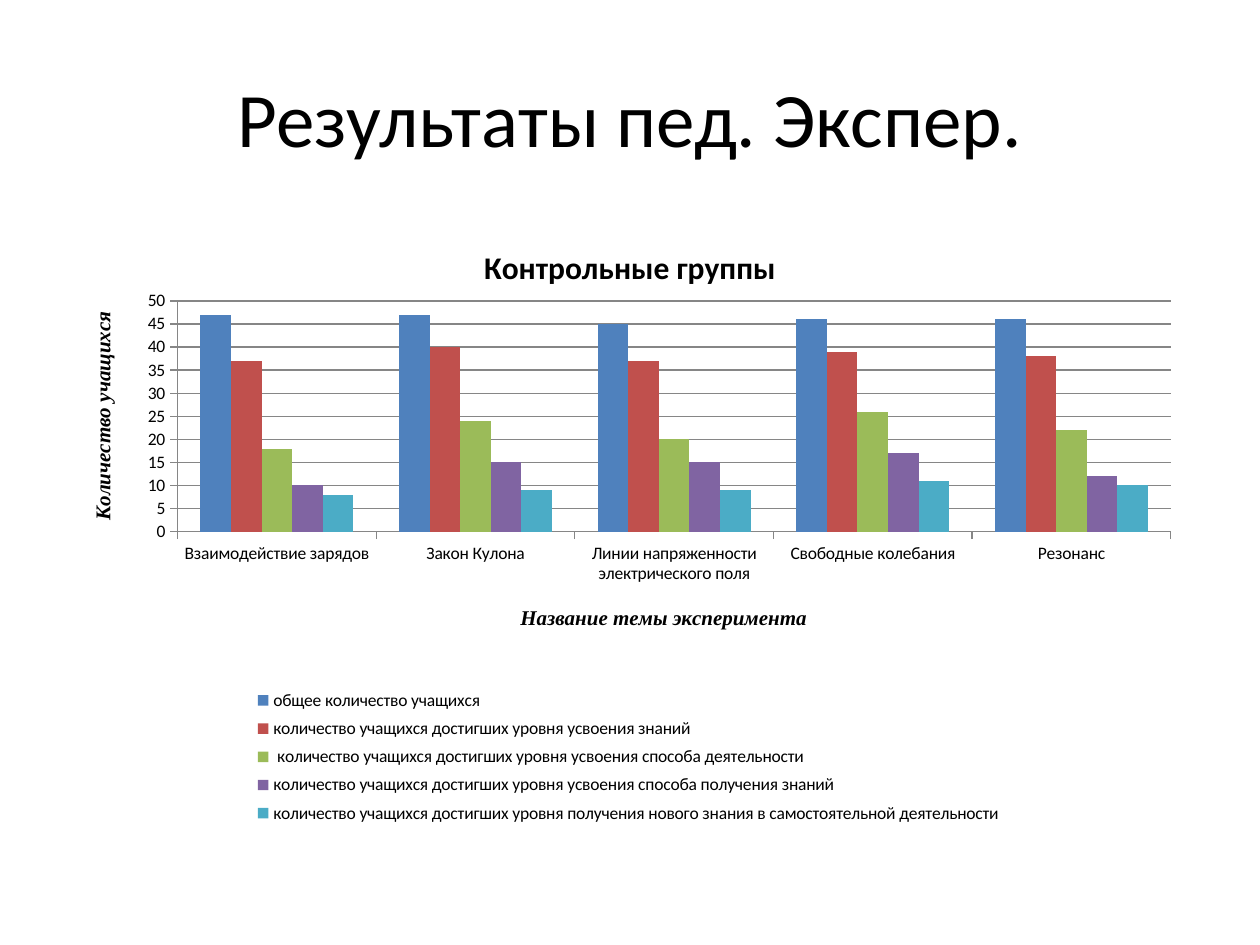
from lxml import etree
from pptx import Presentation
from pptx.chart.data import CategoryChartData
from pptx.dml.color import RGBColor
from pptx.enum.chart import XL_CHART_TYPE, XL_LEGEND_POSITION, XL_TICK_MARK
from pptx.enum.text import MSO_ANCHOR, PP_ALIGN
from pptx.oxml.ns import qn
from pptx.util import Inches, Pt

COLUMN = XL_CHART_TYPE.COLUMN_CLUSTERED
BOTTOM = XL_LEGEND_POSITION.BOTTOM
OUT = XL_TICK_MARK.OUTSIDE
MIDDLE = MSO_ANCHOR.MIDDLE
CENTER = PP_ALIGN.CENTER
BLACK = RGBColor(0x00, 0x00, 0x00)
GRAY = RGBColor(0x86, 0x86, 0x86)
BLUE = RGBColor(0x4F, 0x81, 0xBD)
RED = RGBColor(0xC0, 0x50, 0x4D)
GREEN = RGBColor(0x9B, 0xBB, 0x59)
PURPLE = RGBColor(0x80, 0x64, 0xA2)
TEAL = RGBColor(0x4B, 0xAC, 0xC6)

TOPICS = ["Взаимодействие зарядов", "Закон Кулона",
          "Линии напряженности электрического поля",
          "Свободные колебания", "Резонанс"]
SERIES = [
    ("общее количество учащихся ", [47, 47, 45, 46, 46], BLUE),
    ("количество учащихся достигших уровня усвоения знаний",
     [37, 40, 37, 39, 38], RED),
    (" количество учащихся достигших уровня усвоения способа деятельности",
     [18, 24, 20, 26, 22], GREEN),
    ("количество учащихся достигших уровня усвоения способа получения знаний",
     [10, 15, 15, 17, 12], PURPLE),
    ("количество учащихся достигших уровня получения нового знания "
     "в самостоятельной деятельности ", [8, 9, 9, 11, 10], TEAL),
]


def write(frame, text, size, font="Calibri", bold=False, italic=False):
    para = frame.paragraphs[0]
    para.alignment = CENTER
    run = para.add_run()
    run.text = text
    run.font.size = Pt(size)
    run.font.name = font
    run.font.bold = bold
    run.font.italic = italic
    run.font.color.rgb = BLACK


def place(part, **marks):
    for old in part.findall(qn("c:layout")):
        part.remove(old)
    layout = etree.Element(qn("c:layout"))
    manual = etree.SubElement(layout, qn("c:manualLayout"))
    for tag, val in marks.items():
        etree.SubElement(manual, qn("c:" + tag)).set("val", str(val))
    over = part.find(qn("c:overlay"))
    part.insert(0 if over is None else part.index(over), layout)


deck = Presentation()
deck.slide_width = Inches(10)
deck.slide_height = Inches(7.5)
slide = deck.slides.add_slide(deck.slide_layouts[5])

title = slide.shapes.title
title.left, title.top = Inches(0.5), Inches(0.3)
title.width, title.height = Inches(9), Inches(1.25)
title.text_frame.vertical_anchor = MIDDLE
write(title.text_frame, "Результаты пед. Экспер.", 44)

data = CategoryChartData()
data.categories = TOPICS
for name, vals, color in SERIES:
    data.add_series(name, vals)
chart = slide.shapes.add_chart(COLUMN, Inches(0.5), Inches(1.75),
                               Inches(9), Inches(4.95), data).chart
chart.font.size = Pt(10)
chart.font.name = "Calibri"
chart.font.color.rgb = BLACK
chart.has_title = True
write(chart.chart_title.text_frame, "Контрольные группы", 18, bold=True)

plot = chart.plots[0]
plot.gap_width = 150
plot.overlap = 0
plot.vary_by_categories = False
for series, (name, vals, color) in zip(plot.series, SERIES):
    series.format.fill.solid()
    series.format.fill.fore_color.rgb = color

for axis, label in [(chart.category_axis, "Название темы эксперимента"),
                    (chart.value_axis, "Количество учащихся")]:
    axis.major_tick_mark = OUT
    axis.format.line.color.rgb = GRAY
    axis.has_title = True
    write(axis.axis_title.text_frame, label, 12, "Times New Roman", True, True)

scale = chart.value_axis
scale.minimum_scale, scale.maximum_scale, scale.major_unit = 0, 50, 5
scale.has_major_gridlines = True
scale.major_gridlines.format.line.color.rgb = GRAY

chart.has_legend = True
chart.legend.position = BOTTOM
chart.legend.include_in_layout = False

root = chart.element if hasattr(chart, "element") else chart._chartSpace
place(root.find(".//" + qn("c:plotArea")), layoutTarget="inner",
      xMode="edge", yMode="edge", x=0.101, y=0.129, w=0.876, h=0.37)
place(root.find(".//" + qn("c:legend")),
      xMode="edge", yMode="edge", x=0.16, y=0.74, w=0.68, h=0.24)
for kind, x, y in [("catAx", 0.4, 0.61), ("valAx", 0.02, 0.14)]:
    axis = root.find(".//" + qn("c:" + kind))
    place(axis.find(qn("c:title")), xMode="edge", yMode="edge", x=x, y=y)

deck.save("out.pptx")
